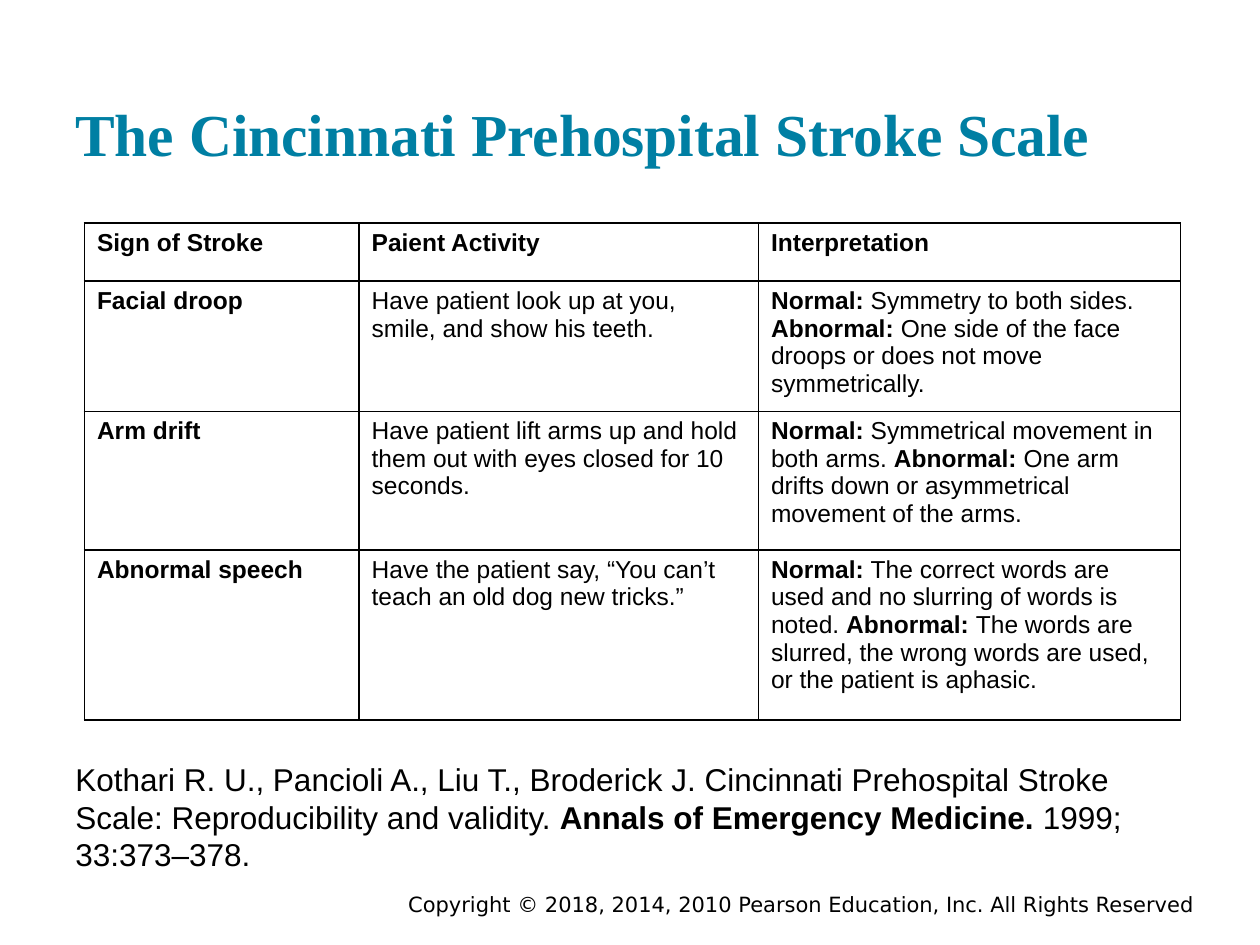
import pptx
import pptx.dml.color
import pptx.enum.text
import pptx.oxml
import pptx.oxml.ns
import pptx.util
from pptx.util import Inches

BLACK, TEAL = "000000", "007FA3"
ANCHOR = pptx.enum.text.MSO_ANCHOR
ALIGN = pptx.enum.text.PP_ALIGN

COLUMN_WIDTHS = [2.18, 3.17, 3.35]
ROW_HEIGHTS = [0.46, 0.93, 1.1, 1.35]
HEADINGS = ["Sign of Stroke", "Paient Activity", "Interpretation"]
SIGNS = [
    ("Facial droop", "Have patient look up at you, smile, and show his teeth.",
     "Symmetry to both sides.",
     "One side of the face droops or does not move symmetrically."),
    ("Arm drift",
     "Have patient lift arms up and hold them out with eyes closed for 10 seconds.",
     "Symmetrical movement in both arms.",
     "One arm drifts down or asymmetrical movement of the arms."),
    ("Abnormal speech",
     "Have the patient say, “You can’t teach an old dog new tricks.”",
     "The correct words are used and no slurring of words is noted.",
     "The words are slurred, the wrong words are used, or the patient is aphasic."),
]


def rgb(value):
    return pptx.dml.color.RGBColor.from_string(value)


def write(frame, pieces, size, font="Arial", color=BLACK):
    """Fill the first paragraph with (text, bold) pieces."""
    paragraph = frame.paragraphs[0]
    for text, bold in pieces:
        run = paragraph.add_run()
        run.text = text
        run.font.size = pptx.util.Pt(size)
        run.font.name = font
        run.font.bold = bold
        run.font.color.rgb = rgb(color)
    return paragraph


def add_text_frame(slide, box, anchor, inset=0.1):
    frame = slide.shapes.add_textbox(*map(Inches, box)).text_frame
    frame.word_wrap = True
    frame.vertical_anchor = anchor
    frame.margin_left = frame.margin_right = Inches(0.1)
    frame.margin_top = frame.margin_bottom = Inches(inset)
    return frame


def add_title(slide, box):
    frame = add_text_frame(slide, box, ANCHOR.BOTTOM)
    write(frame, [("The Cincinnati Prehospital Stroke Scale", True)], 34,
          "Times New Roman", TEAL)


def add_citation(slide, box):
    frame = add_text_frame(slide, box, ANCHOR.TOP)
    write(frame, [
        ("Kothari R. U., Pancioli A., Liu T., Broderick J. Cincinnati Prehospital "
         "Stroke Scale: Reproducibility and validity. ", False),
        ("Annals of Emergency Medicine. ", True),
        ("1999; 33:373–378.", False),
    ], 18)


def add_copyright(slide, box):
    frame = add_text_frame(slide, box, ANCHOR.MIDDLE, 0.05)
    paragraph = write(frame, [
        ("Copyright © 2018, 2014, 2010 Pearson Education, Inc. All Rights Reserved",
         False)], 12, "DejaVu Sans")
    paragraph.alignment = ALIGN.RIGHT


def border_cell(cell, color=BLACK, width=1):
    properties = cell._tc.get_or_add_tcPr()
    for side in ("lnL", "lnR", "lnT", "lnB"):
        properties.append(pptx.oxml.parse_xml(
            f'<a:{side} {pptx.oxml.ns.nsdecls("a")} w="{pptx.util.Pt(width)}">'
            f'<a:solidFill><a:srgbClr val="{color}"/></a:solidFill></a:{side}>'))


def table_rows():
    yield [[(heading, True)] for heading in HEADINGS]
    for sign, activity, normal, abnormal in SIGNS:
        yield [[(sign, True)], [(activity, False)],
               [("Normal: ", True), (normal + " ", False),
                ("Abnormal: ", True), (abnormal, False)]]


def add_stroke_table(slide, left, top):
    table = slide.shapes.add_table(
        len(ROW_HEIGHTS), len(COLUMN_WIDTHS), Inches(left), Inches(top),
        Inches(sum(COLUMN_WIDTHS)), Inches(sum(ROW_HEIGHTS))).table
    table.first_row = table.horz_banding = False
    for column, width in zip(table.columns, COLUMN_WIDTHS):
        column.width = Inches(width)
    for row, height, contents in zip(table.rows, ROW_HEIGHTS, table_rows()):
        row.height = Inches(height)
        for cell, pieces in zip(row.cells, contents):
            border_cell(cell)
            cell.fill.background()
            write(cell.text_frame, pieces, 14)


def main():
    presentation = pptx.Presentation()
    presentation.slide_width = Inches(10)
    presentation.slide_height = Inches(7.5)
    slide = presentation.slides.add_slide(presentation.slide_layouts[6])
    add_copyright(slide, (2.92, 7.05, 6.66, 0.25))
    add_title(slide, (0.5, 0.24, 9, 1.2))
    add_stroke_table(slide, 0.67, 1.77)
    add_citation(slide, (0.5, 5.93, 9, 1.04))
    presentation.save("out.pptx")


if __name__ == "__main__":
    main()
